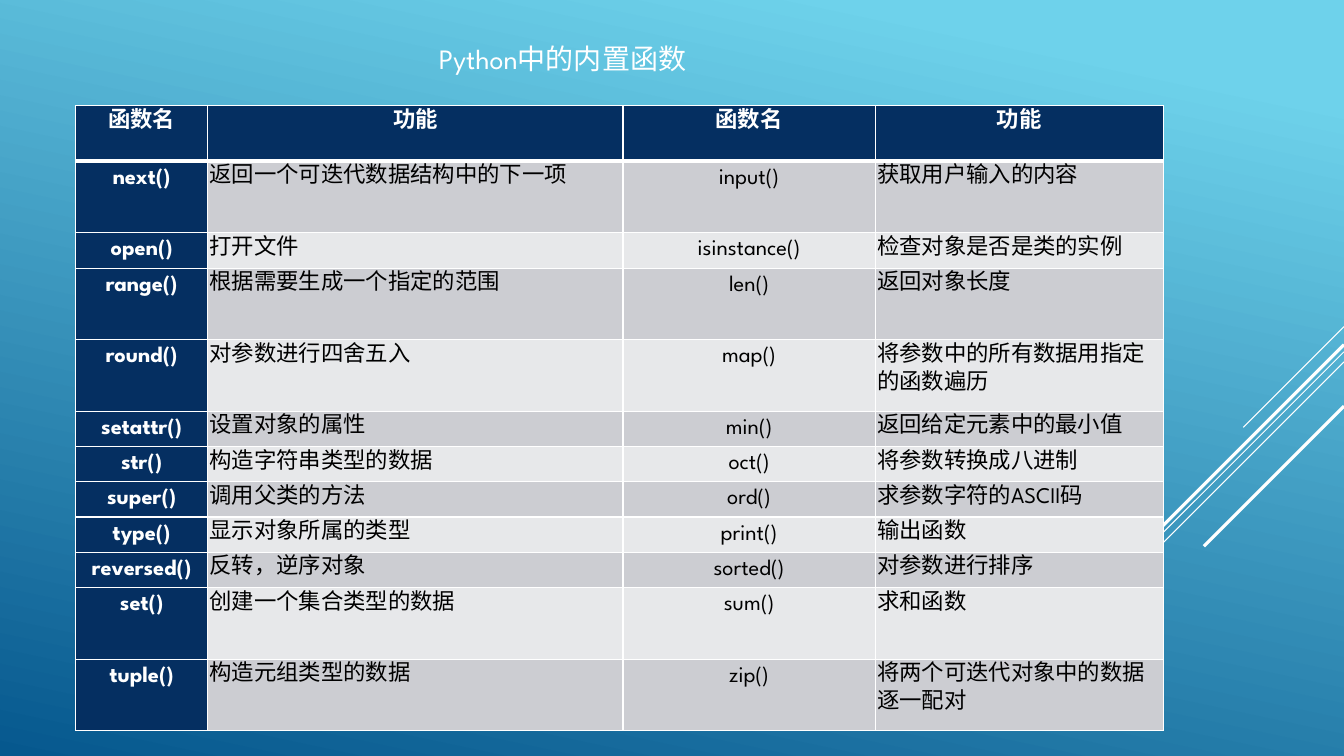
import pptx
import pptx.dml.color
import pptx.enum.shapes
import pptx.enum.text
import pptx.oxml
import pptx.oxml.ns
import pptx.util

Inches = pptx.util.Inches
Pt = pptx.util.Pt
RGBColor = pptx.dml.color.RGBColor
ALIGN = pptx.enum.text.PP_ALIGN

SKY = RGBColor(0x6E, 0xD2, 0xEB)
OCEAN = RGBColor(0x06, 0x58, 0x8E)
NAVY = RGBColor(0x05, 0x2F, 0x61)
DARK_BAND = RGBColor(0xCC, 0xCD, 0xD2)
LIGHT_BAND = RGBColor(0xE7, 0xE8, 0xEA)
WHITE = RGBColor(0xFF, 0xFF, 0xFF)
BLACK = RGBColor(0, 0, 0)
FONT = "League Spartan"


def write(frame, text, size, color, bold=False, align=ALIGN.CENTER, spacing=None):
    para = frame.paragraphs[0]
    para.alignment = align
    para.line_spacing = spacing
    span = para.add_run()
    span.text = text
    span.font.name = FONT
    span.font.size = Pt(size)
    span.font.bold = bold
    span.font.color.rgb = color


def add_border(cell, side, width):
    cell_properties = cell._tc.get_or_add_tcPr()
    cell_properties.append(pptx.oxml.parse_xml(
        f'<a:ln{side} {pptx.oxml.ns.nsdecls("a")} w="{Pt(width)}">'
        f'<a:solidFill><a:srgbClr val="{WHITE}"/></a:solidFill></a:ln{side}>'))


deck = pptx.Presentation()
deck.slide_width = Inches(13.33)
deck.slide_height = Inches(7.5)
slide = deck.slides.add_slide(deck.slide_layouts[5])

# Background gradient, running down and slightly left
background = slide.background.fill
background.gradient()
background.gradient_angle = 360 - 102
for stop, position, color in zip(background.gradient_stops, (0.1, 1), (SKY, OCEAN)):
    stop.position = position
    stop.color.rgb = color

# Diagonal lines from the right edge, all at 45 degrees: start height, reach, weight
RIGHT = 13.33
for top, reach, weight in [(3.24, 1, 0.75), (3.49, 3.26, 0.75), (3.59, 2.07, 0.75),
                           (3.42, 1.91, 2.25), (4.03, 1.39, 2.25)]:
    line = slide.shapes.add_connector(
        pptx.enum.shapes.MSO_CONNECTOR.STRAIGHT,
        Inches(RIGHT), Inches(top), Inches(RIGHT - reach), Inches(top + reach))
    line.line.color.rgb = WHITE
    line.line.width = Pt(weight)
    line._element.spPr.append(
        pptx.oxml.parse_xml(f'<a:effectLst {pptx.oxml.ns.nsdecls("a")}/>'))

# Table of built-in functions
HEADER = ("函数名", "功能", "函数名", "功能")
FUNCTIONS = [
    ("next()", "返回一个可迭代数据结构中的下一项", "input()", "获取用户输入的内容"),
    ("open()", "打开文件", "isinstance()", "检查对象是否是类的实例"),
    ("range()", "根据需要生成一个指定的范围", "len()", "返回对象长度"),
    ("round()", "对参数进行四舍五入", "map()", "将参数中的所有数据用指定的函数遍历"),
    ("setattr()", "设置对象的属性", "min()", "返回给定元素中的最小值"),
    ("str()", "构造字符串类型的数据", "oct()", "将参数转换成八进制"),
    ("super()", "调用父类的方法", "ord()", "求参数字符的ASCII码"),
    ("type()", "显示对象所属的类型", "print()", "输出函数"),
    ("reversed()", "反转，逆序对象", "sorted()", "对参数进行排序"),
    ("set()", "创建一个集合类型的数据", "sum()", "求和函数"),
    ("tuple()", "构造元组类型的数据", "zip()", "将两个可迭代对象中的数据逐一配对"),
]
COLUMN_WIDTHS = (1.31, 4.12, 2.5, 2.86)
TALL_ROWS = (1, 3, 4, 10, 11)

rows = [HEADER] + FUNCTIONS
table = slide.shapes.add_table(len(rows), len(HEADER), Inches(0.75), Inches(1.05),
                               Inches(10.79), Inches(6.2)).table
for column, width in zip(table.columns, COLUMN_WIDTHS):
    column.width = Inches(width)

for row_index, texts in enumerate(rows):
    height = 0.55 if row_index == 0 else 0.71 if row_index in TALL_ROWS else 0.35
    table.rows[row_index].height = Inches(height)
    band = DARK_BAND if row_index % 2 else LIGHT_BAND
    for column_index, text in enumerate(texts):
        cell = table.cell(row_index, column_index)
        heading = row_index == 0 or column_index == 0
        centered = heading or column_index == 2
        cell.margin_left = cell.margin_right = Inches(0.02)
        cell.margin_top = cell.margin_bottom = 0
        # A thick rule separates the header from the first function
        add_border(cell, "L", 1)
        add_border(cell, "R", 1)
        add_border(cell, "T", 3 if row_index == 1 else 1)
        add_border(cell, "B", 3 if row_index == 0 else 1)
        cell.fill.solid()
        cell.fill.fore_color.rgb = NAVY if heading else band
        write(cell.text_frame, text, 16, WHITE if heading else BLACK, bold=heading,
              align=ALIGN.CENTER if centered else ALIGN.LEFT, spacing=Pt(20))

# Title
title = slide.shapes.title
title.left, title.top = Inches(4.17), Inches(0.36)
title.width, title.height = Inches(2.82), Inches(0.44)
title.text_frame.word_wrap = False
title.text_frame.auto_size = pptx.enum.text.MSO_AUTO_SIZE.SHAPE_TO_FIT_TEXT
title.text_frame.vertical_anchor = pptx.enum.text.MSO_ANCHOR.TOP
write(title.text_frame, "Python中的内置函数", 20, WHITE)

deck.save("out.pptx")
